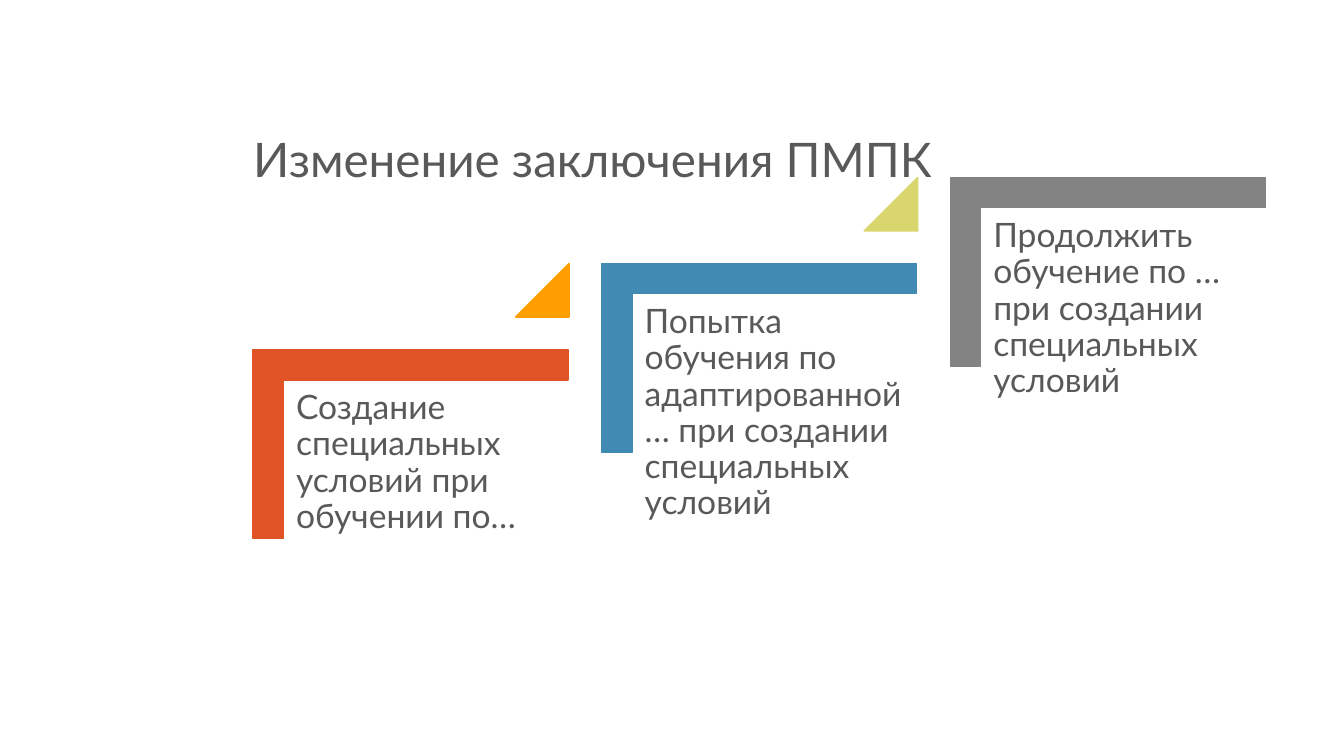
"""Build a slide with three rising steps on changing a commission's conclusion."""
import dataclasses
import typing

import pptx
import pptx.dml.color
import pptx.enum.shapes
import pptx.enum.text
import pptx.util

EMU_PER_PX = 9525
COLOURS = {
    "text": "595959",
    "red": "DF5327",
    "orange": "FE9E00",
    "blue": "418AB3",
    "lime": "D9D66D",
    "grey": "838383",
}
FIRST_LEFT, FIRST_TOP = 301, 273
STEP_RIGHT, STEP_UP = 332, 82
Preset = pptx.enum.shapes.MSO_SHAPE


@dataclasses.dataclass
class Step:
    text: str
    colour: str
    triangle_colour: typing.Optional[str] = None


STEPS = [
    Step("Создание специальных условий при обучении по…", "red", "orange"),
    Step("Попытка обучения по адаптированной … при создании специальных условий", "blue", "lime"),
    Step("Продолжить обучение по … при создании специальных условий", "grey"),
]


def px(length: int) -> pptx.util.Emu:
    return pptx.util.Emu(length * EMU_PER_PX)


def rgb(name: str) -> pptx.dml.color.RGBColor:
    return pptx.dml.color.RGBColor.from_string(COLOURS[name])


def write_text(shape, text: str, *, size: int, anchor, inset: int = 10) -> None:
    frame = shape.text_frame
    frame.word_wrap = True
    frame.auto_size = pptx.enum.text.MSO_AUTO_SIZE.NONE
    frame.vertical_anchor = anchor
    frame.margin_left = frame.margin_right = px(inset)
    frame.margin_top = frame.margin_bottom = px(inset)
    paragraph = frame.paragraphs[0]
    paragraph.alignment = pptx.enum.text.PP_ALIGN.LEFT
    paragraph.line_spacing = 0.9
    run = paragraph.add_run()
    run.text = text
    run.font.name = "Lato"
    run.font.size = pptx.util.Pt(size)
    run.font.color.rgb = rgb("text")


def add_figure(slide, preset, box: tuple[int, int, int, int], colour: str,
               adjustments: list[float], rotation: int = 0) -> None:
    shape = slide.shapes.add_shape(preset, *map(px, box))
    shape.shadow.inherit = False
    shape.rotation = rotation
    for index, value in enumerate(adjustments):
        shape.adjustments[index] = value
    shape.fill.solid()
    shape.fill.fore_color.rgb = rgb(colour)
    shape.line.color.rgb = rgb(colour)
    shape.line.width = pptx.util.Pt(1)


def add_step(slide, step: Step, index: int) -> None:
    left = FIRST_LEFT + index * STEP_RIGHT
    top = FIRST_TOP - index * STEP_UP
    add_figure(slide, Preset.CORNER, (left, top, 180, 300), step.colour, [0.16, 0.16], 90)
    label = slide.shapes.add_textbox(*map(px, (left - 29, top + 89, 271, 237)))
    write_text(label, step.text, size=24, anchor=pptx.enum.text.MSO_ANCHOR.TOP)
    if step.triangle_colour:
        add_figure(slide, Preset.ISOSCELES_TRIANGLE, (left + 190, top - 22, 51, 51),
                   step.triangle_colour, [1])


def main() -> None:
    presentation = pptx.Presentation()
    presentation.slide_width, presentation.slide_height = px(1280), px(720)
    slide = presentation.slides.add_slide(presentation.slide_layouts[5])
    title = slide.shapes.title
    title.left, title.top, title.width, title.height = map(px, (231, 32, 984, 157))
    write_text(title, "Изменение заключения ПМПК", size=34,
               anchor=pptx.enum.text.MSO_ANCHOR.BOTTOM)
    for index, step in enumerate(STEPS):
        add_step(slide, step, index)
    presentation.save("out.pptx")


if __name__ == "__main__":
    main()
